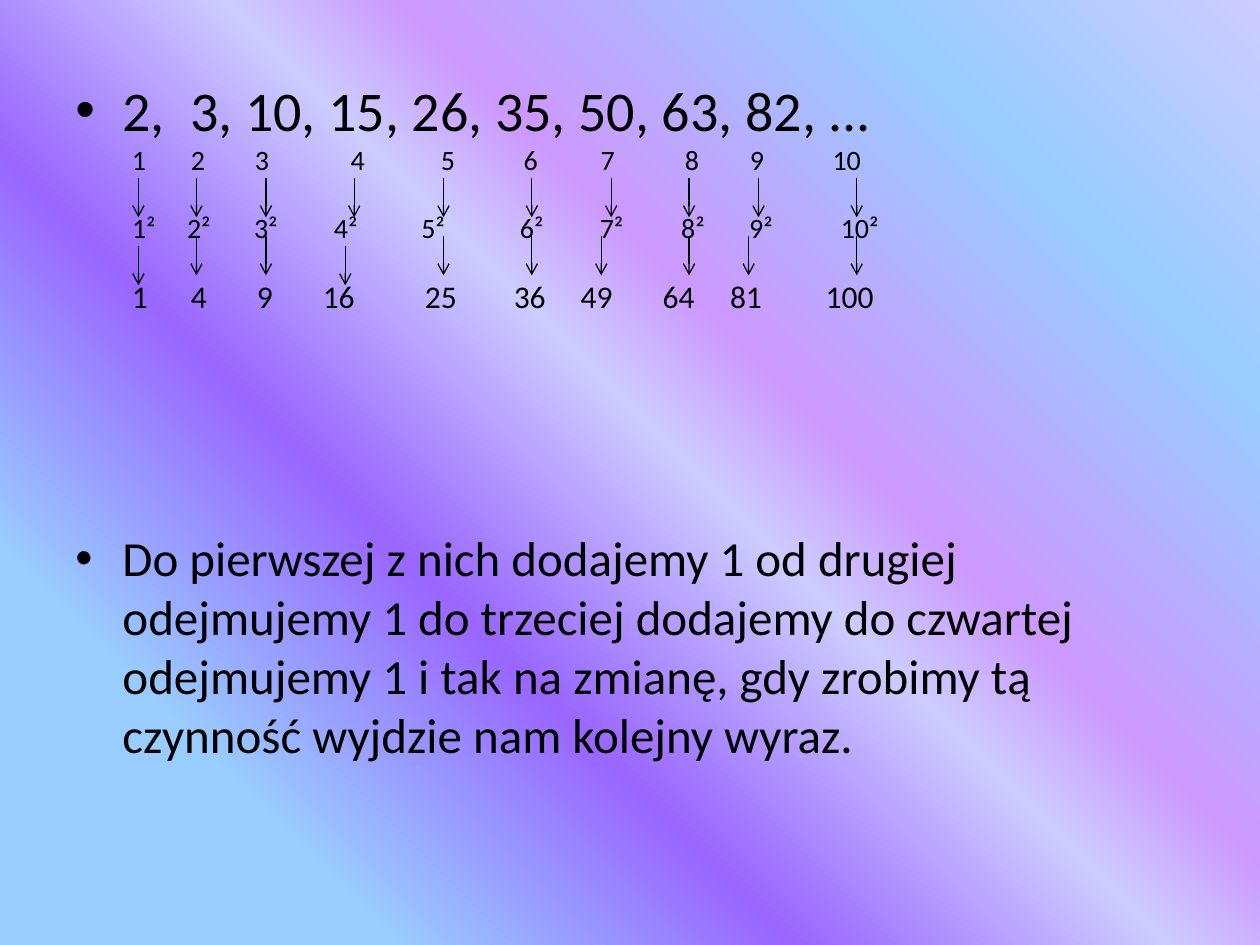
from pptx import Presentation
from pptx.dml.color import RGBColor
from pptx.enum.shapes import MSO_CONNECTOR
from pptx.oxml.ns import qn
from pptx.util import Cm, Pt
from lxml.etree import SubElement

STRAIGHT = MSO_CONNECTOR.STRAIGHT
BLACK = RGBColor(0x00, 0x00, 0x00)
SKY = RGBColor(0x99, 0xCC, 0xFF)
VIOLET = RGBColor(0x99, 0x66, 0xFF)
LAVENDER = RGBColor(0xCC, 0xCC, 0xFF)
ORCHID = RGBColor(0xCC, 0x99, 0xFF)

SEQUENCE = "2, 3, 10, 15, 26, 35, 50, 63, 82, ..."
RULE = ("Do pierwszej z nich dodajemy 1 od drugiej odejmujemy 1 do trzeciej "
        "dodajemy do czwartej odejmujemy 1 i tak na zmianę, gdy zrobimy tą "
        "czynność wyjdzie nam kolejny wyraz.")

deck = Presentation()
deck.slide_width = Cm(25.4)
deck.slide_height = Cm(19.05)
page = deck.slides.add_slide(deck.slide_layouts[6])

background = page.background.fill
background.gradient()
background.gradient_angle = 45
stops = page.element.find(".//" + qn("a:gsLst"))
for stop in list(stops):
    stops.remove(stop)
for percent, color in [(18, SKY), (36, VIOLET), (53, LAVENDER),
                       (61, ORCHID), (82, SKY), (100, LAVENDER)]:
    stop = SubElement(stops, qn("a:gs"), pos=str(percent * 1000))
    SubElement(stop, qn("a:srgbClr"), val=str(color))

box = page.shapes.add_textbox(Cm(1.27), Cm(1.4), Cm(22.86), Cm(15.62))
frame = box.text_frame
frame.word_wrap = True


def add_line(para, text, size, space_before):
    para.text = text
    para.space_before = Pt(space_before)
    font = para.runs[0].font
    font.name = "Calibri"
    font.size = Pt(size)
    font.color.rgb = BLACK
    return para.runs[0]._r.getparent().get_or_add_pPr()


def add_bullet(properties):
    properties.set("marL", str(Cm(0.95)))
    properties.set("indent", str(Cm(-0.95)))
    SubElement(properties, qn("a:buFont"), typeface="Arial")
    SubElement(properties, qn("a:buChar"), char="•")


add_bullet(add_line(frame.paragraphs[0], SEQUENCE.replace("2, 3", "2,  3", 1), 32, 0))

numbers = range(1, 11)
rows = [
    ([f"{n}" for n in numbers], 16, 0,
     [1.28, 2.47, 3.76, 5.69, 7.51, 9.18, 10.73, 12.43, 13.74, 15.55]),
    ([f"{n}²" for n in numbers], 16, 19.5,
     [1.38, 2.49, 3.84, 5.45, 7.21, 9.2, 10.81, 12.45, 13.82, 15.81]),
    ([f"{n * n}" for n in numbers], 18, 18.5,
     [1.3, 2.49, 3.82, 5.31, 7.37, 9.16, 10.51, 12.16, 13.52, 15.61]),
]
for values, size, space_before, centers in rows:
    text = "".join("\t" + value for value in values)
    properties = add_line(frame.add_paragraph(), text, size, space_before)
    tabs = SubElement(properties, qn("a:tabLst"))
    for center in centers:
        SubElement(tabs, qn("a:tab"), pos=str(Cm(center)), algn="ctr")

add_bullet(add_line(frame.add_paragraph(), RULE, 28, 122))

to_squares = [2.79, 3.96, 5.36, 7.14, 8.94, 10.72, 12.32, 13.89, 15.29, 17.27]
to_results = [3.96, 5.36, 8.94, 10.72, 12.12, 13.89, 15.09, 17.27]
to_low_results = [2.79, 6.96]
for top, columns in [(3.58, to_squares), (4.75, to_results), (4.95, to_low_results)]:
    for x in columns:
        arrow = page.shapes.add_connector(STRAIGHT, Cm(x), Cm(top), Cm(x), Cm(top + 0.8))
        arrow.line.color.rgb = BLACK
        arrow.line.width = Pt(0.75)
        SubElement(arrow.line._get_or_add_ln(), qn("a:tailEnd"), type="arrow")
        SubElement(arrow._element.spPr, qn("a:effectLst"))

deck.save("out.pptx")
